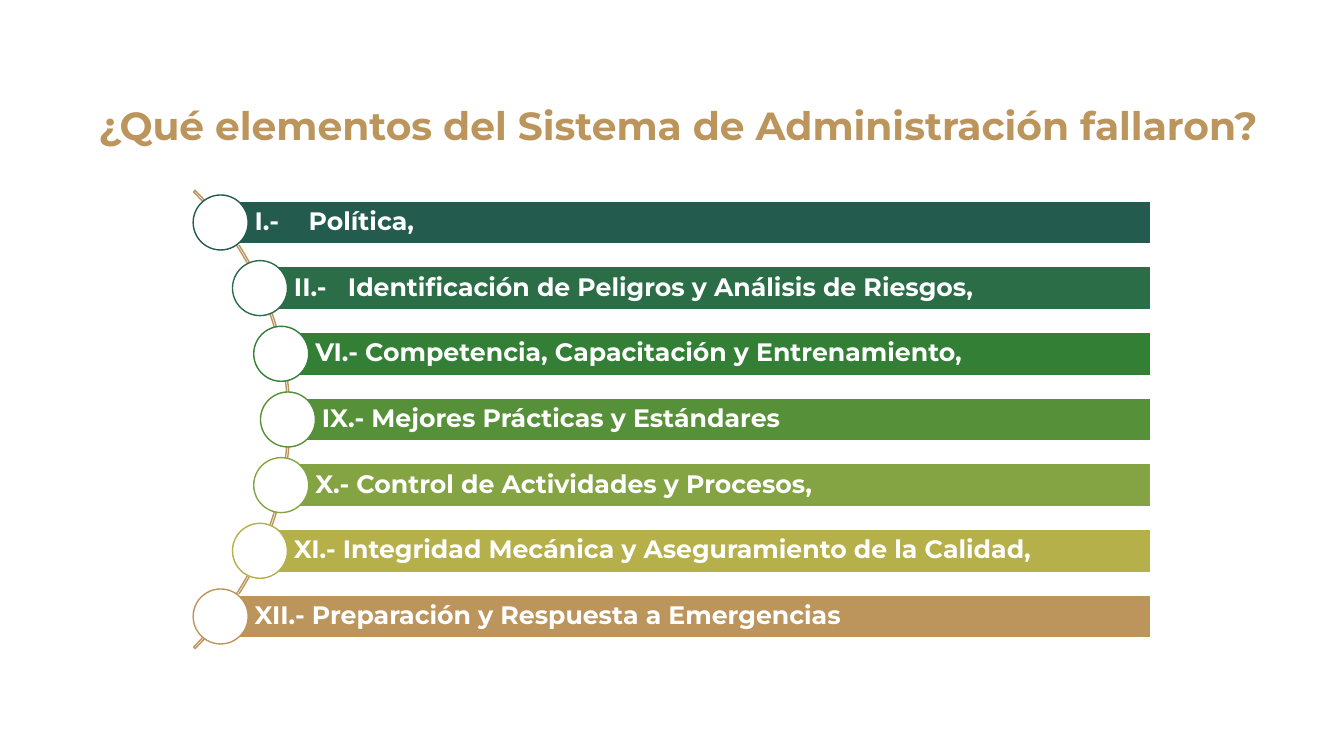
from math import sqrt
from lxml.etree import SubElement
from pptx import Presentation
from pptx.dml.color import RGBColor
from pptx.enum.shapes import MSO_SHAPE
from pptx.enum.text import MSO_ANCHOR, PP_ALIGN
from pptx.oxml.ns import qn
from pptx.util import Pt

SCALE = 914400 / 100.8
FONT = "Montserrat"
WHITE = RGBColor(0xFF, 0xFF, 0xFF)
GOLD = RGBColor(0xBC, 0x95, 0x5C)
ITEMS = [
    ("I.-\tPolítica,", RGBColor(0x23, 0x5B, 0x4E)),
    ("II.-\tIdentificación de Peligros y Análisis de Riesgos,", RGBColor(0x2A, 0x6D, 0x46)),
    ("VI.- Competencia, Capacitación y Entrenamiento,", RGBColor(0x32, 0x7F, 0x35)),
    ("IX.- Mejores Prácticas y Estándares", RGBColor(0x56, 0x91, 0x3A)),
    ("X.- Control de Actividades y Procesos,", RGBColor(0x84, 0xA3, 0x42)),
    ("XI.- Integridad Mecánica y Aseguramiento de la Calidad,", RGBColor(0xB5, 0xB0, 0x4A)),
    ("XII.- Preparación y Respuesta a Emergencias", GOLD),
]


def px(size):
    return round(size * SCALE)


def add_run(para, text, size, color):
    run = para.add_run()
    run.text = text
    run.font.name = FONT
    run.font.size = Pt(size)
    run.font.bold = True
    run.font.color.rgb = color


def add_form(slide, kind, box, fill, line):
    form = slide.shapes.add_shape(kind, *map(px, box))
    form.shadow.inherit = False
    if fill is None:
        form.fill.background()
    else:
        form.fill.solid()
        form.fill.fore_color.rgb = fill
    form.line.color.rgb = line
    form.line.width = Pt(1)
    return form


def add_title(slide, left, top, width, height):
    frame = slide.shapes.add_textbox(px(left), px(top), px(width), px(height)).text_frame
    frame.word_wrap = True
    frame.margin_left = px(60)
    para = frame.paragraphs[0]
    para.alignment = PP_ALIGN.CENTER
    add_run(para, "¿Qué elementos del Sistema de Administración fallaron?", 28, GOLD)


def add_bar(slide, box, text, color):
    frame = add_form(slide, MSO_SHAPE.RECTANGLE, box, color, WHITE).text_frame
    frame.word_wrap = True
    frame.vertical_anchor = MSO_ANCHOR.MIDDLE
    frame.margin_left = px(34)
    frame.margin_right = frame.margin_top = frame.margin_bottom = px(5)
    para = frame.paragraphs[0]
    para.alignment = PP_ALIGN.LEFT
    # Tab stop between numeral and name
    if "\t" in text:
        tabs = SubElement(para._p.get_or_add_pPr(), qn("a:tabLst"))
        SubElement(tabs, qn("a:tab"), pos=str(px(54)), algn="l")
    para.line_spacing = 0.9
    add_run(para, text, 18, WHITE)


def add_list(slide, left, top, width, height):
    # Arc whose rightmost point is 97 px inside the box
    radius, dot, thick = 324, 55, 43
    hub = left + 97 - radius
    mid = top + height / 2
    arc = add_form(slide, MSO_SHAPE.BLOCK_ARC,
                   (hub - radius, mid - radius, 2 * radius, 2 * radius), None, GOLD)
    for i, angle in enumerate((189, 27, 0.0034)):
        arc.adjustments[i] = angle

    # Bars start at the centres of the dots, which follow the arc
    step = (height - dot) / (len(ITEMS) - 1)
    for i, (text, color) in enumerate(ITEMS):
        y = top + dot / 2 + i * step
        x = hub + sqrt((radius - 2) ** 2 - (y - mid) ** 2)
        add_bar(slide, (x, y - thick / 2, left + width - x, thick), text, color)
        add_form(slide, MSO_SHAPE.OVAL, (x - dot / 2, y - dot / 2, dot, dot), WHITE, color)


def main():
    deck = Presentation()
    deck.slide_width, deck.slide_height = px(1344), px(756)
    slide = deck.slides.add_slide(deck.slide_layouts[6])
    add_title(slide, 1, 96, 1304, 57)
    add_list(slide, 193, 195, 958, 449)
    deck.save("out.pptx")


if __name__ == "__main__":
    main()
